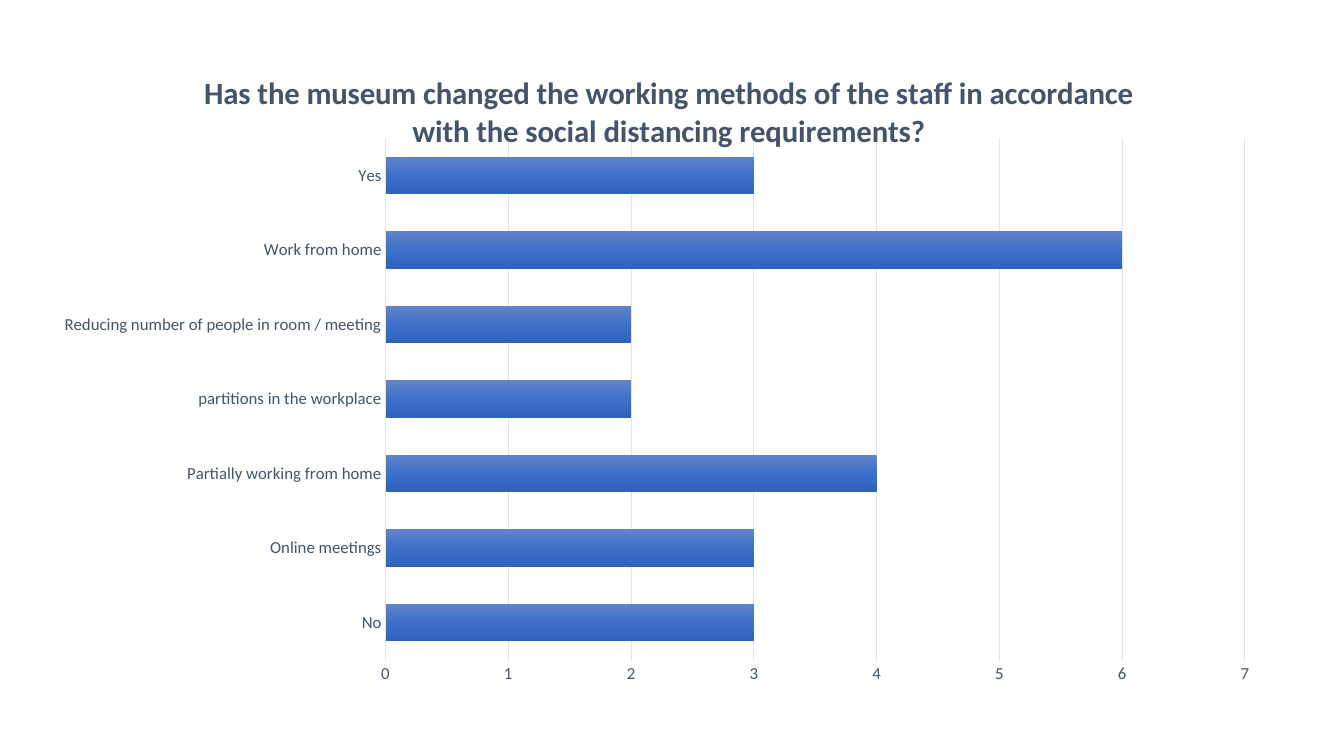
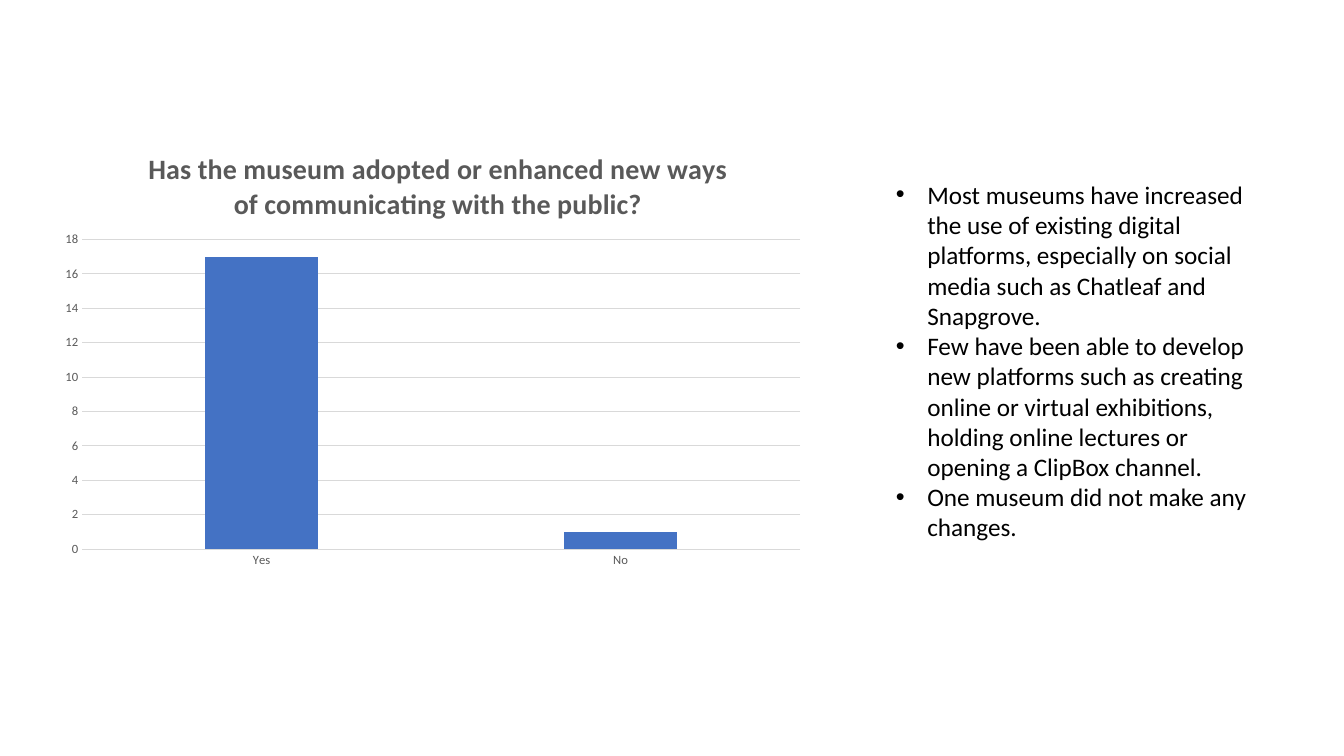
from lxml import etree
from pptx import Presentation
from pptx.chart.data import CategoryChartData
from pptx.dml.color import RGBColor
from pptx.enum.chart import XL_CHART_TYPE as ChartType, XL_TICK_MARK as TickMark
from pptx.enum.text import MSO_AUTO_SIZE as AutoSize
from pptx.oxml import parse_xml
from pptx.oxml.ns import nsdecls, qn
from pptx.util import Cm, Pt

FONT = "Calibri"
COLORS = {
    "slate": "44546A", "pale": "E0E5EB",
    "gray": "595959", "silver": "D9D9D9",
    "blue": "4472C4", "black": "000000",
    "bar_top": "6183CB", "bar_middle": "3E70CA", "bar_bottom": "3062BB",
}


def rgb(name):
    return RGBColor.from_string(COLORS[name])


def style_font(font, size, color, bold=False):
    font.name, font.size, font.bold = FONT, Pt(size), bold
    font.color.rgb = rgb(color)


def place_part(part, index, x, y, w=None, h=None):
    """Fix a chart title or plot area at fractions of the chart."""
    for old in part.findall(qn("c:layout")):
        part.remove(old)
    layout = etree.Element(qn("c:layout"))
    manual = etree.SubElement(layout, qn("c:manualLayout"))
    settings = {"xMode": "edge", "yMode": "edge", "x": x, "y": y}
    if w is not None:
        settings = {"layoutTarget": "inner", **settings, "w": w, "h": h}
    for tag, value in settings.items():
        etree.SubElement(manual, qn(f"c:{tag}")).set("val", str(value))
    part.insert(index, layout)


def fill_gradient(series, stops):
    """Fill bars from top to bottom with (percent, colour) stops."""
    gradient_stops = "".join(
        f'<a:gs pos="{percent * 1000}"><a:srgbClr val="{COLORS[color]}"/></a:gs>'
        for percent, color in stops)
    series.format.fill.background()
    properties = series.format.fill._xPr
    no_fill = properties.find(qn("a:noFill"))
    properties.replace(no_fill, parse_xml(
        f'<a:gradFill {nsdecls("a")} rotWithShape="1"><a:gsLst>{gradient_stops}</a:gsLst>'
        '<a:lin ang="5400000" scaled="0"/></a:gradFill>'))


def style_axes(chart, size, color, grid_color, maximum, step):
    for axis in (chart.category_axis, chart.value_axis):
        axis.major_tick_mark = axis.minor_tick_mark = TickMark.NONE
        style_font(axis.tick_labels.font, size, color)
    values = chart.value_axis
    values.minimum_scale, values.maximum_scale, values.major_unit = 0, maximum, step
    values.format.line.fill.background()
    values.has_major_gridlines = True
    for line in (chart.category_axis.format.line, values.major_gridlines.format.line):
        line.color.rgb = rgb(grid_color)
        line.width = Pt(0.75)


def add_survey_chart(slide, kind, box, answers, question, title_size, title_at,
                     plot_at, color, grid_color, label_size, maximum, step, gap):
    """Add a one-series bar chart with the survey question as its title."""
    data = CategoryChartData()
    data.categories = list(answers)
    data.add_series("Series 1", answers.values())
    chart = slide.shapes.add_chart(kind, *map(Cm, box), data).chart
    style_font(chart.font, 10, "black")
    chart.has_legend = False

    chart.has_title = True
    run = chart.chart_title.text_frame.paragraphs[0].add_run()
    run.text = question
    style_font(run.font, title_size, color, bold=True)
    chart.chart_title.include_in_layout = False
    place_part(chart.chart_title._element, 1, *title_at)
    place_part(chart._chartSpace.chart.plotArea, 0, *plot_at)

    style_axes(chart, label_size, color, grid_color, maximum, step)
    plot = chart.plots[0]
    plot.vary_by_categories = False
    plot.gap_width = gap
    return plot


def add_bullets(slide, box, items):
    frame = slide.shapes.add_textbox(*map(Cm, box)).text_frame
    frame.word_wrap = True
    frame.auto_size = AutoSize.SHAPE_TO_FIT_TEXT
    for index, item in enumerate(items):
        paragraph = frame.add_paragraph() if index else frame.paragraphs[0]
        properties = paragraph._p.get_or_add_pPr()
        indent = Cm(0.79)
        properties.set("marL", str(indent))
        properties.set("indent", str(-indent))
        etree.SubElement(properties, qn("a:buFont")).set("typeface", "Arial")
        etree.SubElement(properties, qn("a:buChar")).set("char", "•")
        run = paragraph.add_run()
        run.text = item
        style_font(run.font, 18, "black")


def add_working_methods(slide):
    answers = {
        "No": 3,
        "Online meetings": 3,
        "Partially working from home": 4,
        "partitions in the workplace": 2,
        "Reducing number of people in room / meeting": 2,
        "Work from home": 6,
        "Yes": 3,
    }
    plot = add_survey_chart(
        slide, ChartType.BAR_CLUSTERED, (1.24, 0.99, 31.39, 16.64), answers,
        "Has the museum changed the working methods of the staff in accordance "
        "with the social distancing requirements?",
        title_size=22, title_at=(0.12, 0.04), plot_at=(0.27, 0.15, 0.69, 0.79),
        color="slate", grid_color="pale", label_size=12, maximum=7, step=1, gap=100)
    fill_gradient(plot.series[0],
                  [(0, "bar_top"), (50, "bar_middle"), (100, "bar_bottom")])


def add_public_communication(slide):
    plot = add_survey_chart(
        slide, ChartType.COLUMN_CLUSTERED, (1.3, 3.05, 19.25, 11.48),
        {"Yes": 17, "No": 1},
        "Has the museum adopted or enhanced new ways of communicating with the public?",
        title_size=20, title_at=(0.12, 0.05), plot_at=(0.04, 0.26, 0.94, 0.68),
        color="gray", grid_color="silver", label_size=9, maximum=18, step=2, gap=219)
    plot.overlap = -27
    bars = plot.series[0].format.fill
    bars.solid()
    bars.fore_color.rgb = rgb("blue")

    add_bullets(slide, (22.33, 4.39, 9.6, 9.5), [
        "Most museums have increased the use of existing digital platforms, "
        "especially on social media such as Chatleaf and Snapgrove.",
        "Few have been able to develop new platforms such as creating online or "
        "virtual exhibitions, holding online lectures or opening a ClipBox channel.",
        "One museum did not make any changes.",
    ])


def main():
    deck = Presentation()
    deck.slide_width, deck.slide_height = Cm(33.87), Cm(19.05)
    for add_content in (add_working_methods, add_public_communication):
        add_content(deck.slides.add_slide(deck.slide_layouts[6]))
    deck.save("out.pptx")


if __name__ == "__main__":
    main()
